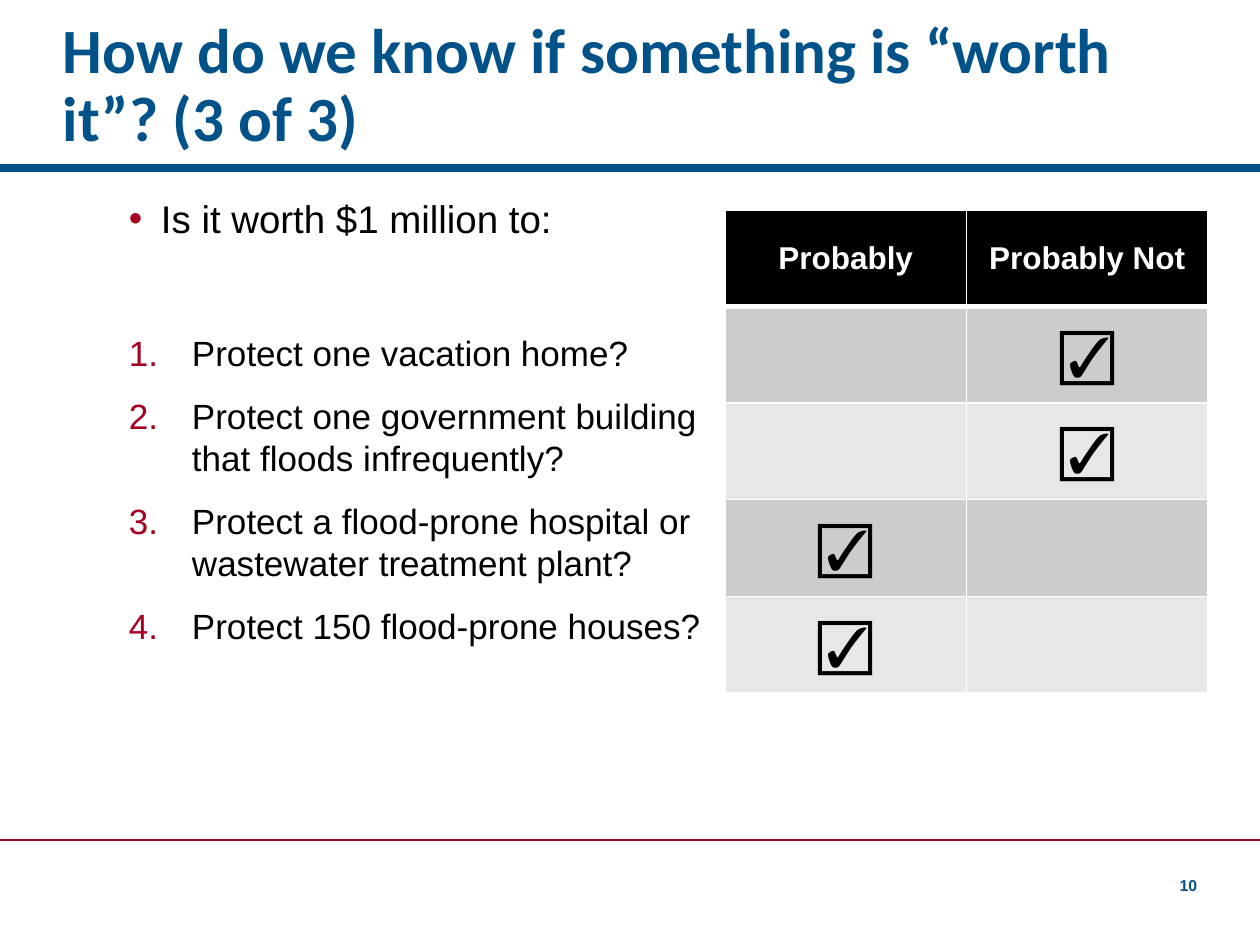
from lxml import etree
from pptx import Presentation
from pptx.dml.color import RGBColor
from pptx.enum.shapes import MSO_CONNECTOR
from pptx.enum.text import MSO_ANCHOR, PP_ALIGN
from pptx.oxml.ns import qn
from pptx.util import Emu, Pt

LINE = MSO_CONNECTOR.STRAIGHT
MIDDLE, BOTTOM, TOP = MSO_ANCHOR.MIDDLE, MSO_ANCHOR.BOTTOM, MSO_ANCHOR.TOP
LEFT, CENTER, RIGHT = PP_ALIGN.LEFT, PP_ALIGN.CENTER, PP_ALIGN.RIGHT

PX_PER_INCH = 126
WIDTH, HEIGHT = 1260, 945
COLORS = {
    "blue": "005288", "red": "A50021", "black": "000000", "white": "FFFFFF",
    "dark_band": "CCCCCC", "light_band": "E7E7E7",
}


def px(n):
    return Emu(round(n * 914400 / PX_PER_INCH))


def rgb(name):
    return RGBColor.from_string(COLORS[name])


def add_color(parent, name):
    etree.SubElement(parent, qn("a:srgbClr"), val=COLORS[name])


class Deck:
    def __init__(self):
        self.prs = Presentation()
        self.prs.slide_width, self.prs.slide_height = px(WIDTH), px(HEIGHT)
        self.s = self.prs.slides.add_slide(self.prs.slide_layouts[6])

    def rule(self, y, color, weight):
        ln = self.s.shapes.add_connector(LINE, 0, px(y), px(WIDTH), px(y))
        ln.line.color.rgb = rgb(color)
        ln.line.width = Pt(weight)
        etree.SubElement(ln._element.spPr, qn("a:effectLst"))

    def textbox(self, x, y, w, h, anchor=TOP, margins=(13, 13)):
        tf = self.s.shapes.add_textbox(px(x), px(y), px(w), px(h)).text_frame
        left, right = margins
        fmt = {"word_wrap": True, "vertical_anchor": anchor,
               "margin_left": px(left), "margin_right": px(right)}
        for key, value in fmt.items():
            setattr(tf, key, value)
        return tf

    def add_text(self, p, text, size, color="black", bold=False, font="Arial",
                 align=LEFT):
        p.alignment = align
        r = p.add_run()
        r.text = text
        r.font.color.rgb = rgb(color)
        fmt = {"name": font, "size": Pt(size), "bold": bold}
        for key, value in fmt.items():
            setattr(r.font, key, value)

    def bullet(self, p, indent, tag, **attrs):
        pPr = p._p.get_or_add_pPr()
        pPr.set("marL", str(px(indent)))
        pPr.set("indent", str(-px(indent)))
        add_color(etree.SubElement(pPr, qn("a:buClr")), "red")
        etree.SubElement(pPr, qn("a:buFont"), typeface="Arial")
        etree.SubElement(pPr, qn(tag), **attrs)

    def borders(self, cell, top, bottom):
        tcPr = cell._tc.get_or_add_tcPr()
        sides = {"a:lnL": 1, "a:lnR": 1, "a:lnT": top, "a:lnB": bottom}
        for tag, weight in sides.items():
            ln = etree.SubElement(tcPr, qn(tag), w=str(Pt(weight)))
            add_color(etree.SubElement(ln, qn("a:solidFill")), "white")

    def table(self, x, y, w, h, rows):
        tbl = self.s.shapes.add_table(
            len(rows), len(rows[0]), px(x), px(y), px(w), px(h)).table
        for i, row in enumerate(rows):
            header = i == 0
            fill = "black" if header else ("dark_band" if i % 2 else "light_band")
            style = ({"size": 18, "color": "white", "bold": True} if header
                     else {"size": 32})
            for j, text in enumerate(row):
                cell = tbl.cell(i, j)
                self.borders(cell, 3 if i == 1 else 1, 3 if header else 1)
                cell.fill.solid()
                cell.fill.fore_color.rgb = rgb(fill)
                cell.vertical_anchor = MIDDLE
                if text:
                    self.add_text(cell.text_frame.paragraphs[0], text,
                                  align=CENTER, **style)


def main():
    deck = Deck()

    # Header and footer rules
    deck.rule(168, "blue", 4.5)
    deck.rule(840, "red", 1.5)

    # Title
    p = deck.textbox(63, 0, 1134, 161, BOTTOM, (0, 13)).paragraphs[0]
    p.line_spacing = 0.9
    deck.add_text(p, "How do we know if something is “worth it”? (3 of 3)",
                  36, "blue", True, "Calibri")

    # Question and numbered options
    tf = deck.textbox(116, 189, 609, 599)
    p = tf.paragraphs[0]
    deck.add_text(p, "Is it worth $1 million to:", 22)
    deck.bullet(p, 32, "a:buChar", char="•")
    options = [
        "Protect one vacation home?",
        "Protect one government building that floods infrequently?",
        "Protect a flood-prone hospital or wastewater treatment plant?",
        "Protect 150 flood-prone houses?",
    ]
    for i, option in enumerate(options):
        p = tf.add_paragraph()
        p.space_before = Pt(12 if i else 51.5)
        deck.add_text(p, option, 20)
        deck.bullet(p, 63, "a:buAutoNum", type="arabicPeriod")

    # Answer table
    no, yes = ("", "☑"), ("☑", "")
    deck.table(725, 210, 483, 483,
               [("Probably", "Probably Not"), no, no, yes, yes])

    # Slide number
    p = deck.textbox(1155, 869, 42, 32, BOTTOM, (0, 0)).paragraphs[0]
    deck.add_text(p, "10", 9, "blue", True, align=RIGHT)

    deck.prs.save("out.pptx")


if __name__ == "__main__":
    main()
